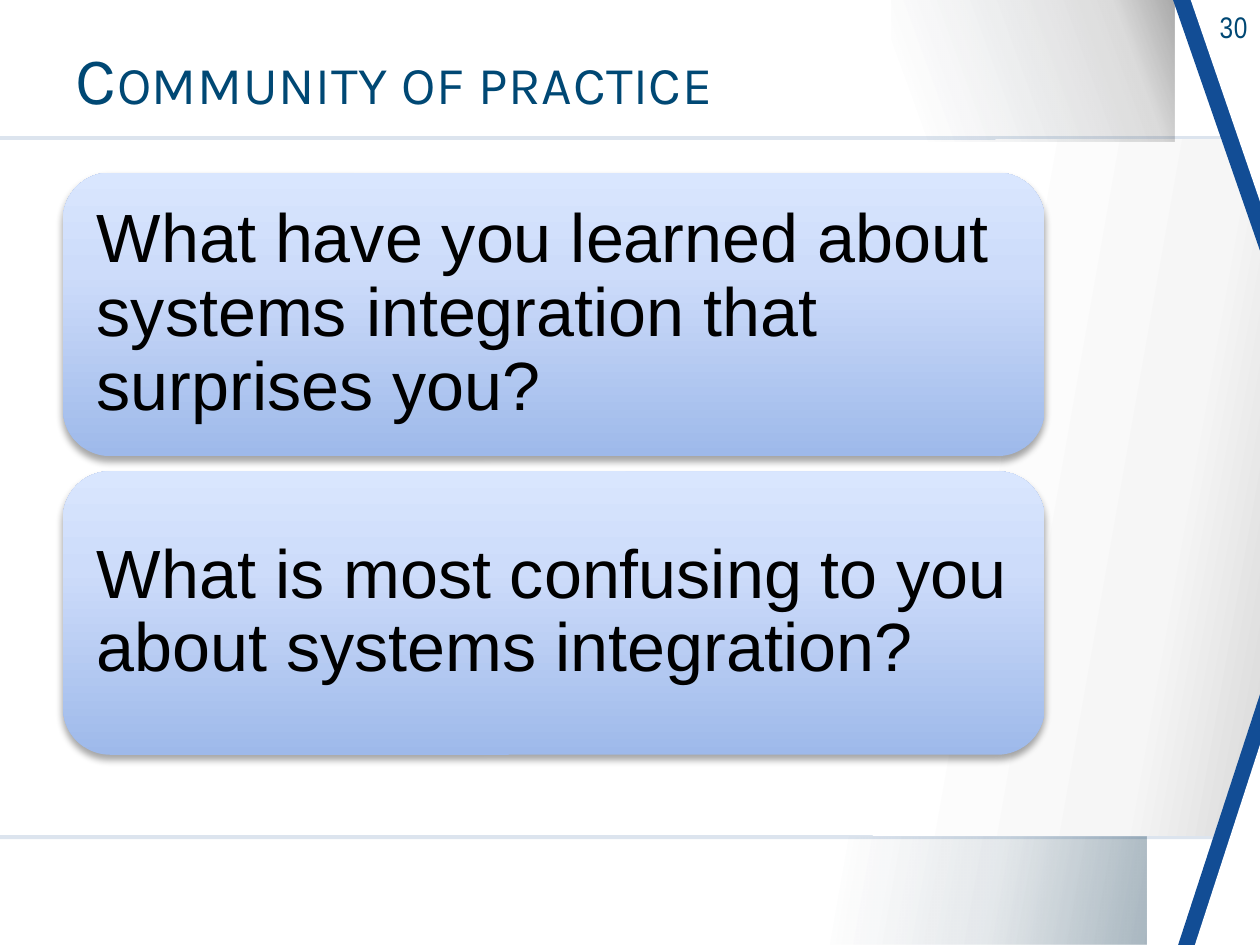
from dataclasses import dataclass
from typing import NamedTuple, Optional

from lxml.etree import SubElement
from pptx import Presentation
from pptx.dml.color import RGBColor as RGB
from pptx.enum.shapes import MSO_SHAPE as Preset
from pptx.enum.text import MSO_ANCHOR as Anchor, MSO_AUTO_SIZE as AutoSize, PP_ALIGN as Align
from pptx.oxml.ns import qn
from pptx.util import Inches, Pt


class Stop(NamedTuple):
    percent: int
    colour: str
    opacity: int = 100


class Box(NamedTuple):
    left: float
    top: float
    width: float
    height: float

    def emu(self) -> list:
        return [Inches(length) for length in self]


@dataclass(frozen=True)
class Theme:
    white: str = "FFFFFF"
    rule: str = "275A99"
    accent: str = "124D95"
    heading: str = "004874"
    navy: str = "002C47"
    black: str = "000000"
    title_font: str = "Karla"
    number_font: str = "Arial Narrow"
    body_font: str = "Arial"
    title_size: int = 38
    number_size: int = 17
    body_size: int = 39
    card_stops: tuple = (Stop(0, "9EB9EA"), Stop(65, "CDDCFA"), Stop(100, "D9E6FE"))


THEME = Theme()


@dataclass(frozen=True)
class Panel:
    box: Box
    stops: tuple
    angle: int = 0


@dataclass(frozen=True)
class Wedge:
    """A right triangle on the right edge; a hanging one points down."""
    box: Box
    colour: str
    hanging: bool


PANELS = (
    Panel(Box(0, 1.08, 10, 5.58), (Stop(0, THEME.rule, 16),)),
    Panel(Box(0, 1.11, 10, 5.52), (Stop(0, THEME.white), Stop(72, THEME.white),
                                   Stop(90, "F6F6F6"), Stop(100, "D9D9D9")), 10),
    Panel(Box(6.43, 6.64, 2.67, 0.86), (Stop(10, THEME.navy, 0), Stop(56, THEME.navy, 11),
                                        Stop(100, THEME.navy, 34)), 10),
    Panel(Box(7.08, 0, 2.24, 1.12), (Stop(10, THEME.navy, 0), Stop(81, THEME.black, 14),
                                     Stop(100, THEME.black, 34)), 340),
)
WEDGES = (
    Wedge(Box(9.31, 0, 0.69, 1.99), THEME.accent, True),
    Wedge(Box(9.45, 0, 0.55, 1.6), THEME.white, True),
    Wedge(Box(9.35, 5.51, 0.65, 1.99), THEME.accent, False),
    Wedge(Box(9.48, 5.91, 0.52, 1.6), THEME.white, False),
)
QUESTIONS = (
    "What have you learned about systems integration that surprises you?",
    "What is most confusing to you about systems integration?",
)
FIRST_CARD = Box(0.5, 1.37, 7.79, 2.25)
CARD_PITCH = 2.37
CARD_INSET = 0.16


def apply(target, formats: dict) -> None:
    for name, value in formats.items():
        setattr(target, name, value)


def add_colour(parent, colour: str, opacity: int) -> None:
    element = SubElement(parent, qn("a:srgbClr"), val=colour)
    if opacity < 100:
        SubElement(element, qn("a:alpha"), val=str(opacity * 1000))


def paint(shape, stops: tuple, angle: int = 0) -> None:
    """Fill with one stop as a solid or several as a linear gradient; no line or shadow."""
    shape.shadow.inherit = False
    shape.line.fill.background()
    shape.fill.background()
    properties = shape._element.spPr
    empty = properties.find(qn("a:noFill"))
    fill = SubElement(properties, qn("a:solidFill" if len(stops) == 1 else "a:gradFill"))
    properties.replace(empty, fill)
    if len(stops) == 1:
        add_colour(fill, stops[0].colour, stops[0].opacity)
        return
    stop_list = SubElement(fill, qn("a:gsLst"))
    for stop in stops:
        position = SubElement(stop_list, qn("a:gs"), pos=str(stop.percent * 1000))
        add_colour(position, stop.colour, stop.opacity)
    SubElement(fill, qn("a:lin"), ang=str(angle * 60000), scaled="0")


def write(shape, text: str, font: str, size: int, colour: str, frame_formats: dict,
          paragraph_formats: dict, run_attributes: Optional[dict] = None) -> None:
    frame = shape.text_frame
    apply(frame, {"word_wrap": True, "auto_size": AutoSize.NONE, **frame_formats})
    paragraph = frame.paragraphs[0]
    apply(paragraph, paragraph_formats)
    run = paragraph.add_run()
    run.text = text
    apply(run.font, {"name": font, "size": Pt(size)})
    run.font.color.rgb = RGB.from_string(colour)
    for name, value in (run_attributes or {}).items():
        run.font._element.set(name, value)


def add_panel(slide, panel: Panel) -> None:
    shape = slide.shapes.add_shape(Preset.RECTANGLE, *panel.box.emu())
    paint(shape, panel.stops, panel.angle)


def add_wedge(slide, wedge: Wedge) -> None:
    shape = slide.shapes.add_shape(Preset.ISOSCELES_TRIANGLE, *wedge.box.emu())
    shape.adjustments[0] = 1
    paint(shape, (Stop(0, wedge.colour),))
    if wedge.hanging:
        shape._element.spPr.xfrm.set("flipV", "1")


def add_card(slide, box: Box, question: str) -> None:
    card = slide.shapes.add_shape(Preset.ROUNDED_RECTANGLE, *box.emu())
    paint(card, THEME.card_stops, 270)
    effects = card._element.spPr.find(qn("a:effectLst"))
    shadow = SubElement(effects, qn("a:outerShdw"), blurRad=str(Pt(4)), dist=str(Pt(3)),
                        dir="5400000", rotWithShape="0")
    add_colour(shadow, THEME.black, 35)
    margins = {f"margin_{side}": Inches(CARD_INSET) for side in ("left", "top", "right", "bottom")}
    write(card, question, THEME.body_font, THEME.body_size, THEME.black,
          {"vertical_anchor": Anchor.MIDDLE, **margins},
          {"alignment": Align.LEFT, "line_spacing": 0.9})


def place_title(slide, box: Box, text: str) -> None:
    title = slide.shapes.title
    apply(title, dict(zip(("left", "top", "width", "height"), box.emu())))
    write(title, text, THEME.title_font, THEME.title_size, THEME.heading,
          {"vertical_anchor": Anchor.MIDDLE},
          {"alignment": Align.LEFT, "line_spacing": 0.85}, {"cap": "small", "spc": "40"})
    slide.shapes._spTree.append(title._element)  # in front of the backdrop


def add_slide_number(slide, box: Box, number: str) -> None:
    write(slide.shapes.add_textbox(*box.emu()), number, THEME.number_font, THEME.number_size,
          THEME.heading, {}, {"alignment": Align.RIGHT}, {"spc": "40"})


def main() -> None:
    deck = Presentation()
    apply(deck, {"slide_width": Inches(10), "slide_height": Inches(7.5)})
    slide = deck.slides.add_slide(deck.slide_layouts[5])
    for panel in PANELS:
        add_panel(slide, panel)
    for wedge in WEDGES:
        add_wedge(slide, wedge)
    add_slide_number(slide, Box(9.2, 0.02, 0.8, 0.39), "30")
    place_title(slide, Box(0.5, 0.24, 7.56, 0.85), "Community of practice")
    for row, question in enumerate(QUESTIONS):
        add_card(slide, FIRST_CARD._replace(top=FIRST_CARD.top + row * CARD_PITCH), question)
    deck.save("out.pptx")


if __name__ == "__main__":
    main()
